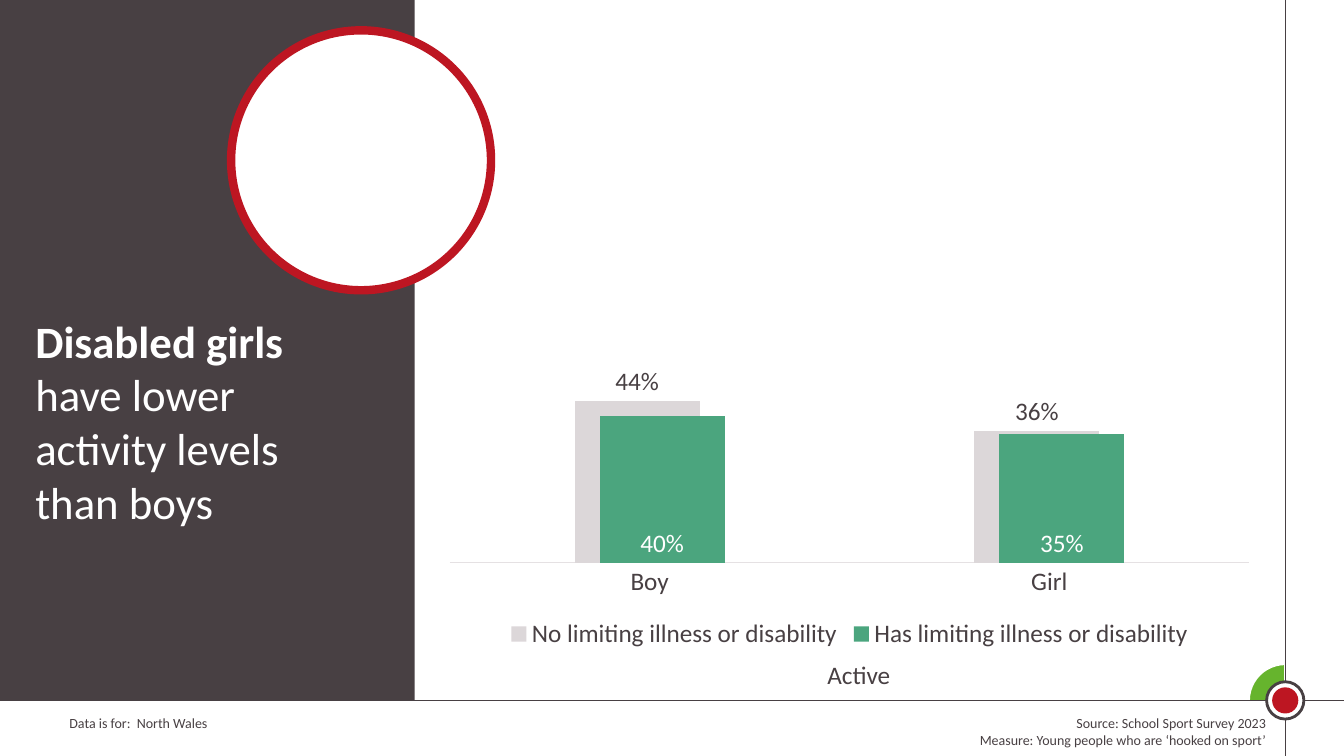
from dataclasses import dataclass
from typing import Optional

from lxml import etree
from pptx import Presentation
from pptx.chart import data
from pptx.dml import color
from pptx.enum import chart as kinds, shapes, text
from pptx.oxml import ns
from pptx.util import Cm, Pt

FONT = "Calibri"
HUES = {"dark": "484043", "white": "FFFFFF", "red": "BD1622", "lime": "66B42D",
        "grey": "DCD7D9", "green": "4BA57E", "rule": "E5E1E3"}
WIDE, HIGH = 33.87, 19.05
CROSS_X, CROSS_Y = 32.39, 17.65  # where the two rules meet
SHAPE = shapes.MSO_SHAPE
LEFT, RIGHT = text.PP_ALIGN.LEFT, text.PP_ALIGN.RIGHT


@dataclass
class Disc:
    x: float  # centre
    y: float
    size: float
    fill: str
    edge: Optional[str] = None
    weight: float = 0
    form: SHAPE = SHAPE.OVAL


@dataclass
class Note:
    x: float
    y: float
    wide: float
    high: float
    lines: list[list[str]]  # runs of each paragraph
    size: float
    hue: str = "dark"
    align: text.PP_ALIGN = LEFT
    lead: bool = False  # first run in bold


@dataclass
class Bars:
    name: str
    vals: tuple[float, ...]
    fill: str
    label: str
    place: Optional[kinds.XL_LABEL_POSITION] = None


def rgb(hue: str) -> color.RGBColor:
    return color.RGBColor.from_string(HUES[hue])


def style(font, size: float, hue: str) -> None:
    font.name, font.size = FONT, Pt(size)
    font.color.rgb = rgb(hue)


def paint(item, fill: str, edge: Optional[str] = None, weight: float = 0) -> None:
    item.shadow.inherit = False
    item.fill.solid()
    item.fill.fore_color.rgb = rgb(fill)
    if edge:
        item.line.color.rgb = rgb(edge)
        item.line.width = Pt(weight)
    else:
        item.line.fill.background()


def draw_disc(slide, disc: Disc):
    half = disc.size / 2
    item = slide.shapes.add_shape(disc.form, Cm(disc.x - half), Cm(disc.y - half),
                                  Cm(disc.size), Cm(disc.size))
    paint(item, disc.fill, disc.edge, disc.weight)
    return item


def draw_rule(slide, x1: float, y1: float, x2: float, y2: float) -> None:
    rule = slide.shapes.add_connector(shapes.MSO_CONNECTOR.STRAIGHT,
                                      Cm(x1), Cm(y1), Cm(x2), Cm(y2))
    rule.line.color.rgb = rgb("dark")
    rule.line.width = Pt(1)
    etree.SubElement(rule._element.spPr, ns.qn("a:effectLst"))


def draw_note(slide, note: Note) -> None:
    box = slide.shapes.add_textbox(Cm(note.x), Cm(note.y), Cm(note.wide), Cm(note.high))
    frame = box.text_frame
    frame.word_wrap = True
    frame.text = "\n".join(line[0] for line in note.lines)
    for para, line in zip(frame.paragraphs, note.lines):
        para.alignment = note.align
        for words in line[1:]:
            para.add_run().text = words
        for run in para.runs:
            style(run.font, note.size, note.hue)
        para.runs[0].font.bold = note.lead


def draw_chart(slide, cats: tuple[str, ...], sets: list[Bars]) -> None:
    feed = data.CategoryChartData(number_format="0%")
    feed.categories = cats
    for bars in sets:
        feed.add_series(bars.name, bars.vals)
    chart = slide.shapes.add_chart(kinds.XL_CHART_TYPE.COLUMN_CLUSTERED, Cm(10.92), Cm(4.7),
                                   Cm(20.98), Cm(11.79), feed).chart
    style(chart.font, 18, "dark")
    chart.has_title = False
    chart.has_legend = True
    chart.legend.position = kinds.XL_LEGEND_POSITION.BOTTOM
    chart.legend.include_in_layout = False
    style(chart.legend.font, 18, "dark")

    # Axes
    base, scale = chart.category_axis, chart.value_axis
    base.major_tick_mark = kinds.XL_TICK_MARK.NONE
    base.format.line.color.rgb = rgb("rule")
    base.format.line.width = Pt(0.75)
    style(base.tick_labels.font, 18, "dark")
    scale.minimum_scale, scale.maximum_scale = 0, 1
    scale.has_major_gridlines = False
    scale.visible = False

    # Columns and their labels
    plot = chart.plots[0]
    plot.gap_width, plot.overlap = 200, 80
    plot.vary_by_categories = False
    for bars, row in zip(sets, plot.series):
        row.format.fill.solid()
        row.format.fill.fore_color.rgb = rgb(bars.fill)
        tags = row.data_labels
        tags.show_value = True
        tags.number_format, tags.number_format_is_linked = "0%", False
        style(tags.font, 18, bars.label)
        if bars.place is not None:
            tags.position = bars.place


def main() -> None:
    deck = Presentation()
    deck.slide_width, deck.slide_height = Cm(WIDE), Cm(HIGH)
    slide = deck.slides.add_slide(deck.slide_layouts[6])

    # Corner mark and rules
    wedge = draw_disc(slide, Disc(CROSS_X, CROSS_Y, 1.83, "lime", "white", 1.5, SHAPE.PIE))
    wedge.adjustments[0], wedge.adjustments[1] = 106.62, 162
    draw_rule(slide, CROSS_X, 0, CROSS_X, HIGH)
    draw_rule(slide, 0, CROSS_Y, WIDE, CROSS_Y)
    for disc in (Disc(CROSS_X, CROSS_Y, 0.94, "white", "dark", 2),
                 Disc(CROSS_X, CROSS_Y, 0.66, "red")):
        draw_disc(slide, disc)

    # Side panel with its ring
    panel = slide.shapes.add_shape(SHAPE.RECTANGLE, 0, 0, Cm(10.45), Cm(CROSS_Y))
    paint(panel, "dark")
    draw_disc(slide, Disc(9.1, 4.04, 6.55, "white", "red", 6))

    # Texts
    for note in (
        Note(1.5, 17.88, 11.15, 0.69, [["Data is for:  North Wales"]], 10),
        Note(15.72, 17.88, 16.43, 1.12,
             [["Source: School Sport Survey 2023"],
              ["Measure: Young people who are ‘hooked on sport’"]], 10, align=RIGHT),
        Note(0.64, 7.77, 8.71, 5.74,
             [["Disabled girls ", "have lower activity levels than boys"]],
             32, "white", lead=True),
        Note(20.6, 16.48, 3.1, 1.02, [["Active"]], 18),
    ):
        draw_note(slide, note)

    # Chart
    draw_chart(slide, ("Boy", "Girl"), [
        Bars("No limiting illness or disability", (0.44, 0.36), "grey", "dark"),
        Bars("Has limiting illness or disability", (0.4, 0.35), "green", "white",
             kinds.XL_LABEL_POSITION.INSIDE_BASE),
    ])
    deck.save("out.pptx")


if __name__ == "__main__":
    main()
